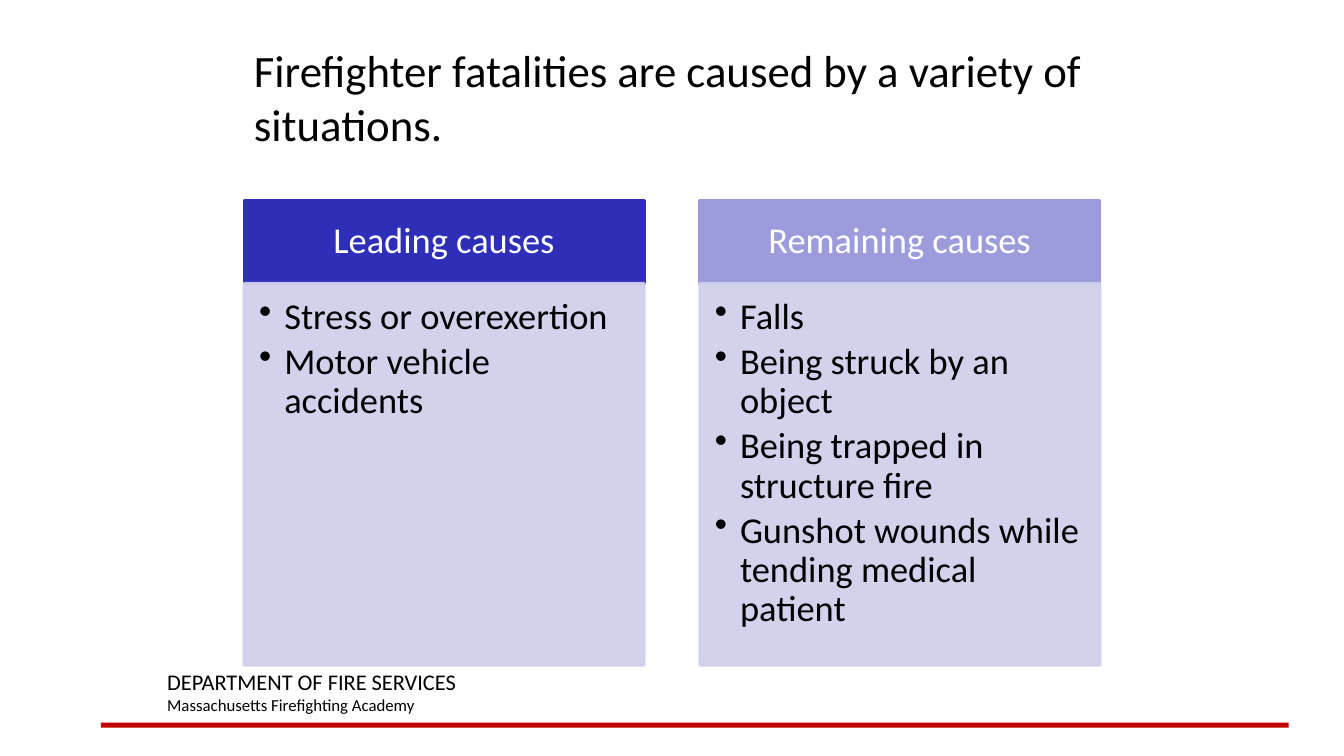
import lxml.etree
import pptx
import pptx.dml.color
import pptx.enum.shapes
import pptx.enum.text
import pptx.oxml.ns
import pptx.util

Inches = pptx.util.Inches
Pt = pptx.util.Pt
RGBColor = pptx.dml.color.RGBColor
ANCHOR = pptx.enum.text.MSO_ANCHOR
ALIGN = pptx.enum.text.PP_ALIGN
qn = pptx.oxml.ns.qn

BLACK = RGBColor(0x00, 0x00, 0x00)
WHITE = RGBColor(0xFF, 0xFF, 0xFF)
RED = RGBColor(0xC0, 0x00, 0x00)
INDIGO = RGBColor(0x2E, 0x2E, 0xB9)
LAVENDER = RGBColor(0x9C, 0x9C, 0xDD)
PALE = RGBColor(0xCE, 0xCE, 0xEC)

FONT = "Calibri"
HEADER_HEIGHT = 0.82
COLUMN_WIDTH = 3.97
COLUMNS = [
    ("Leading causes", INDIGO, ["Stress or overexertion", "Motor vehicle accidents"]),
    ("Remaining causes", LAVENDER, [
        "Falls",
        "Being struck by an object",
        "Being trapped in structure fire",
        "Gunshot wounds while tending medical patient",
    ]),
]


def set_font(paragraph, size, color):
    paragraph.font.name = FONT
    paragraph.font.size = Pt(size)
    paragraph.font.color.rgb = color


def set_margins(frame, left, top, right, bottom):
    frame.margin_left, frame.margin_top = Inches(left), Inches(top)
    frame.margin_right, frame.margin_bottom = Inches(right), Inches(bottom)


def add_rectangle(slide, left, top, width, height, color):
    shape = slide.shapes.add_shape(
        pptx.enum.shapes.MSO_SHAPE.RECTANGLE,
        Inches(left), Inches(top), Inches(width), Inches(height))
    shape.shadow.inherit = False
    shape.fill.solid()
    shape.fill.fore_color.rgb = color
    shape.line.fill.background()
    return shape


def add_panel(slide, left, top, width, height, color):
    shape = add_rectangle(slide, left, top, width, height, color)
    shape.line.color.rgb = color
    shape.line.width = Pt(2)
    shape.text_frame.word_wrap = True
    return shape


def add_text(slide, left, top, width, height, lines):
    box = slide.shapes.add_textbox(Inches(left), Inches(top), Inches(width), Inches(height))
    frame = box.text_frame
    frame.word_wrap = True
    frame.text = "\n".join(text for text, size in lines)
    for paragraph, (text, size) in zip(frame.paragraphs, lines):
        set_font(paragraph, size, BLACK)
    return frame


def set_opacity(shape, percent):
    for color in shape._element.spPr.iter(qn("a:srgbClr")):
        lxml.etree.SubElement(color, qn("a:alpha")).set("val", str(percent * 1000))


def add_bullet(paragraph):
    properties = paragraph._p.get_or_add_pPr()
    properties.set("marL", str(Inches(0.25)))
    properties.set("indent", str(-Inches(0.25)))
    lxml.etree.SubElement(properties, qn("a:buChar")).set("char", "•")


def add_cause_column(slide, left, top, width, height, heading, color, causes):
    # Heading
    header = add_panel(slide, left, top, width, HEADER_HEIGHT, color)
    frame = header.text_frame
    frame.vertical_anchor = ANCHOR.MIDDLE
    set_margins(frame, 0.2, 0.12, 0.2, 0.12)
    frame.text = heading
    paragraph = frame.paragraphs[0]
    paragraph.alignment = ALIGN.CENTER
    paragraph.line_spacing = 0.9
    set_font(paragraph, 26, WHITE)

    # Bulleted causes
    body = add_panel(slide, left, top + HEADER_HEIGHT, width, height - HEADER_HEIGHT, PALE)
    set_opacity(body, 90)
    frame = body.text_frame
    frame.vertical_anchor = ANCHOR.TOP
    set_margins(frame, 0.15, 0.15, 0.2, 0.23)
    frame.text = "\n".join(causes)
    for paragraph in frame.paragraphs:
        add_bullet(paragraph)
        paragraph.alignment = ALIGN.LEFT
        paragraph.line_spacing = 0.9
        paragraph.space_after = Pt(4)
        set_font(paragraph, 26, BLACK)


def add_footer(slide, left, top, width):
    add_rectangle(slide, left, top + 0.59, width, 0.05, RED)
    add_text(slide, left + 0.56, top, 5.67, 0.57, [
        ("DEPARTMENT OF FIRE SERVICES", 16),
        ("Massachusetts Firefighting Academy", 12),
    ])


def add_causes(slide, left, top, width, height):
    step = width - COLUMN_WIDTH
    for index, column in enumerate(COLUMNS):
        add_cause_column(slide, left + index * step, top, COLUMN_WIDTH, height, *column)


def add_title(slide, left, top, width, height):
    title = "Firefighter fatalities are caused by a variety of situations."
    frame = add_text(slide, left, top, width, height, [(title, 32)])
    frame.vertical_anchor = ANCHOR.MIDDLE


def main():
    presentation = pptx.Presentation()
    presentation.slide_width = Inches(13.33)
    presentation.slide_height = Inches(7.5)
    slide = presentation.slides.add_slide(presentation.slide_layouts[6])
    add_footer(slide, 1, 6.58, 11.78)
    add_causes(slide, 2.42, 1.99, 8.49, 4.61)
    add_title(slide, 2.42, 0.33, 8.5, 1.25)
    presentation.save("out.pptx")


if __name__ == "__main__":
    main()
